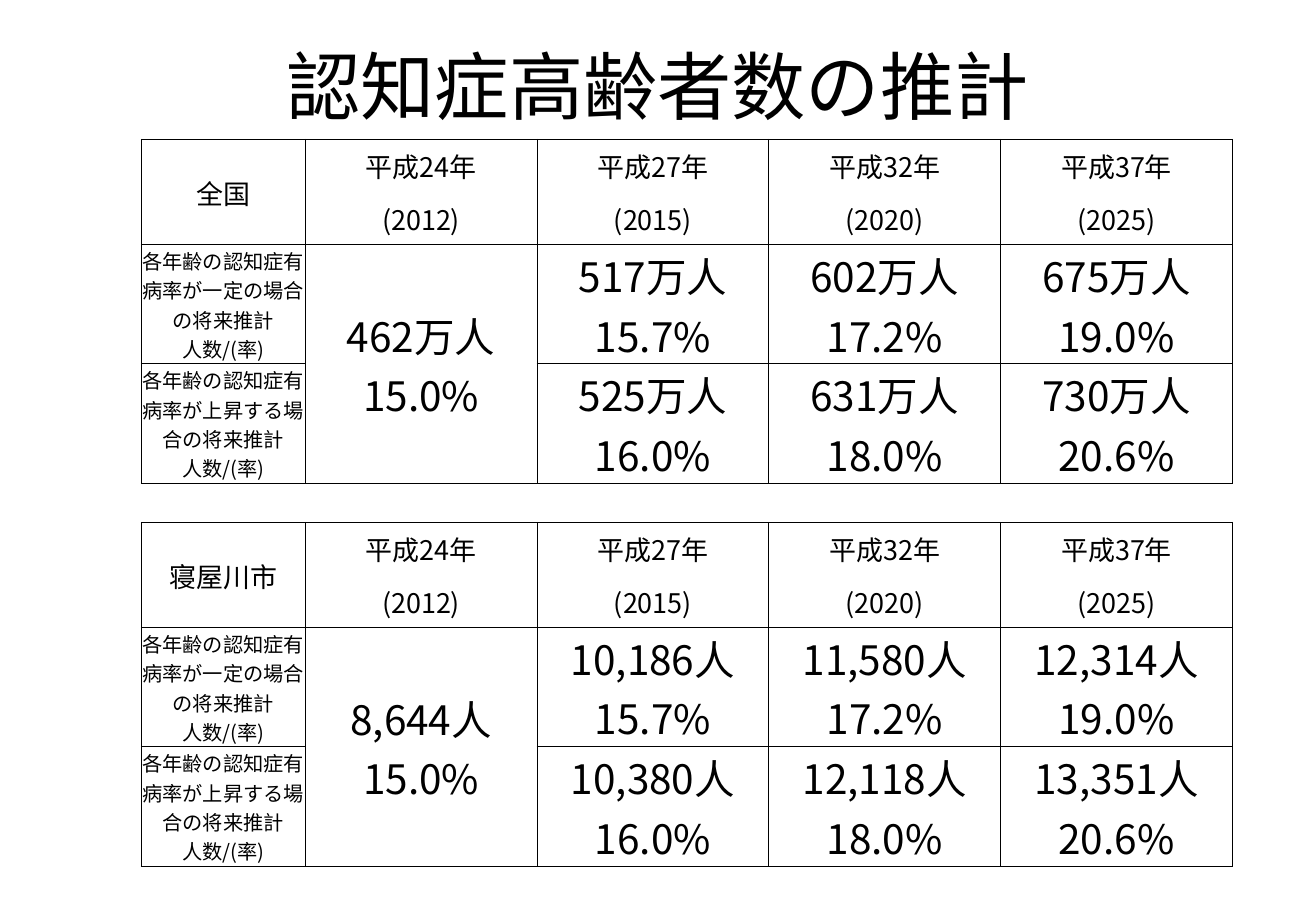
"""Builds the slide with estimates of elderly people with dementia, nationwide and in Neyagawa."""
from lxml import etree
from pptx import Presentation
from pptx.dml.color import RGBColor
from pptx.enum.text import MSO_ANCHOR, PP_ALIGN
from pptx.oxml.ns import qn
from pptx.util import Pt

CENTER = PP_ALIGN.CENTER
TOP, MIDDLE, BOTTOM = MSO_ANCHOR.TOP, MSO_ANCHOR.MIDDLE, MSO_ANCHOR.BOTTOM
COLORS = {"text": "000000", "border": "000000", "background": "FFFFFF"}
CJK_FONT = "Noto Sans CJK JP"
NO_STYLE = "{2D5ABB26-0587-4C30-8999-92F81FD0307C}"


def write_text(frame, text, size, font=CJK_FONT, line_spacing=1.0):
    frame.text = text
    for paragraph in frame.paragraphs:
        paragraph.alignment = CENTER
        paragraph.line_spacing = line_spacing
        for run in paragraph.runs:
            run.font.size = Pt(size)
            run.font.name = font
            run.font.color.rgb = RGBColor.from_string(COLORS["text"])
            east_asian = etree.SubElement(run.font._element, qn("a:ea"))
            east_asian.set("typeface", CJK_FONT)


def set_borders(cell, sides):
    properties = cell._tc.get_or_add_tcPr()
    for side in "LRTB":
        line = etree.SubElement(properties, qn(f"a:ln{side}"), w=str(Pt(0.5)))
        if side in sides:
            fill = etree.SubElement(line, qn("a:solidFill"))
            etree.SubElement(fill, qn("a:srgbClr"), val=COLORS["border"])
        else:
            etree.SubElement(line, qn("a:noFill"))


presentation = Presentation()
presentation.slide_width = Pt(780)
presentation.slide_height = Pt(540)
slide = presentation.slides.add_slide(presentation.slide_layouts[6])
slide.background.fill.solid()
slide.background.fill.fore_color.rgb = RGBColor.from_string(COLORS["background"])

BLOCK_ROWS, SPACER_ROW = 6, 6
ROW_HEIGHT, SPACER_HEIGHT = 31.1, 23.1
COLUMN_WIDTHS = [97.2] + [137.4] * 4
years = [("平成24年", "(2012)"), ("平成27年", "(2015)"),
         ("平成32年", "(2020)"), ("平成37年", "(2025)")]
scenarios = ["各年齢の認知症有病率が一定の場合の将来推計\n人数/(率)",
             "各年齢の認知症有病率が上昇する場合の将来推計\n人数/(率)"]
rates = [["15.7%", "17.2%", "19.0%"], ["16.0%", "18.0%", "20.6%"]]
regions = [
    ("全国", "462万人", [["517万人", "602万人", "675万人"],
                     ["525万人", "631万人", "730万人"]]),
    ("寝屋川市", "8,644人", [["10,186人", "11,580人", "12,314人"],
                         ["10,380人", "12,118人", "13,351人"]]),
]

row_count = 2 * BLOCK_ROWS + 1
table_height = 2 * BLOCK_ROWS * ROW_HEIGHT + SPACER_HEIGHT
table_shape = slide.shapes.add_table(
    row_count, 5, Pt(83.7), Pt(82.6), Pt(sum(COLUMN_WIDTHS)), Pt(table_height))
table = table_shape.table
table.first_row = False
table.horz_banding = False
table._tbl.tblPr.find(qn("a:tableStyleId")).text = NO_STYLE
for column, width in zip(table.columns, COLUMN_WIDTHS):
    column.width = Pt(width)

for row_index, row in enumerate(table.rows):
    is_spacer = row_index == SPACER_ROW
    row.height = Pt(SPACER_HEIGHT if is_spacer else ROW_HEIGHT)
    block_row = row_index % (BLOCK_ROWS + 1)
    for column_index, cell in enumerate(row.cells):
        cell.margin_left = cell.margin_right = cell.margin_top = Pt(0.6)
        cell.margin_bottom = Pt(0)
        if is_spacer:
            sides = "TB"
        elif column_index == 0:
            sides = "LRTB"
        elif column_index == 1 and block_row >= 2:
            sides = "LRT" if block_row < 4 else "LRB"
        else:
            sides = "LRB" if block_row % 2 else "LRT"
        set_borders(cell, sides)
        cell.fill.background()

for region_index, (region, current_count, counts) in enumerate(regions):
    first_row = region_index * (BLOCK_ROWS + 1)
    entries = [(0, 0, region, 16, MIDDLE),
               (2, 1, current_count, 24, BOTTOM),
               (4, 1, "15.0%", 24, TOP)]
    for column_index, year_lines in enumerate(years, 1):
        for line_index, year in enumerate(year_lines):
            entries.append((line_index, column_index, year, 16, MIDDLE))
    for scenario_index, scenario in enumerate(scenarios):
        scenario_row = 2 + 2 * scenario_index
        entries.append((scenario_row, 0, scenario, 12, MIDDLE))
        pairs = zip(counts[scenario_index], rates[scenario_index])
        for column_index, (count, rate) in enumerate(pairs, 2):
            entries.append((scenario_row, column_index, count, 24, BOTTOM))
            entries.append((scenario_row + 1, column_index, rate, 24, TOP))
    for block_row, column_index, text, size, anchor in entries:
        cell = table.cell(first_row + block_row, column_index)
        write_text(cell.text_frame, text, size)
        cell.vertical_anchor = anchor
    for block_row, column_index in [(0, 0), (2, 0), (4, 0), (2, 1), (4, 1)]:
        top_row = first_row + block_row
        table.cell(top_row, column_index).merge(table.cell(top_row + 1, column_index))

title = slide.shapes.add_textbox(Pt(38.9), Pt(21.6), Pt(702), Pt(72.7))
title.text_frame.word_wrap = True
title.text_frame.vertical_anchor = MIDDLE
title.text_frame.margin_top = Pt(0)
title.text_frame.margin_bottom = Pt(8.6)
write_text(title.text_frame, "認知症高齢者数の推計", 44, font="Arial", line_spacing=0.9)

presentation.save("out.pptx")
